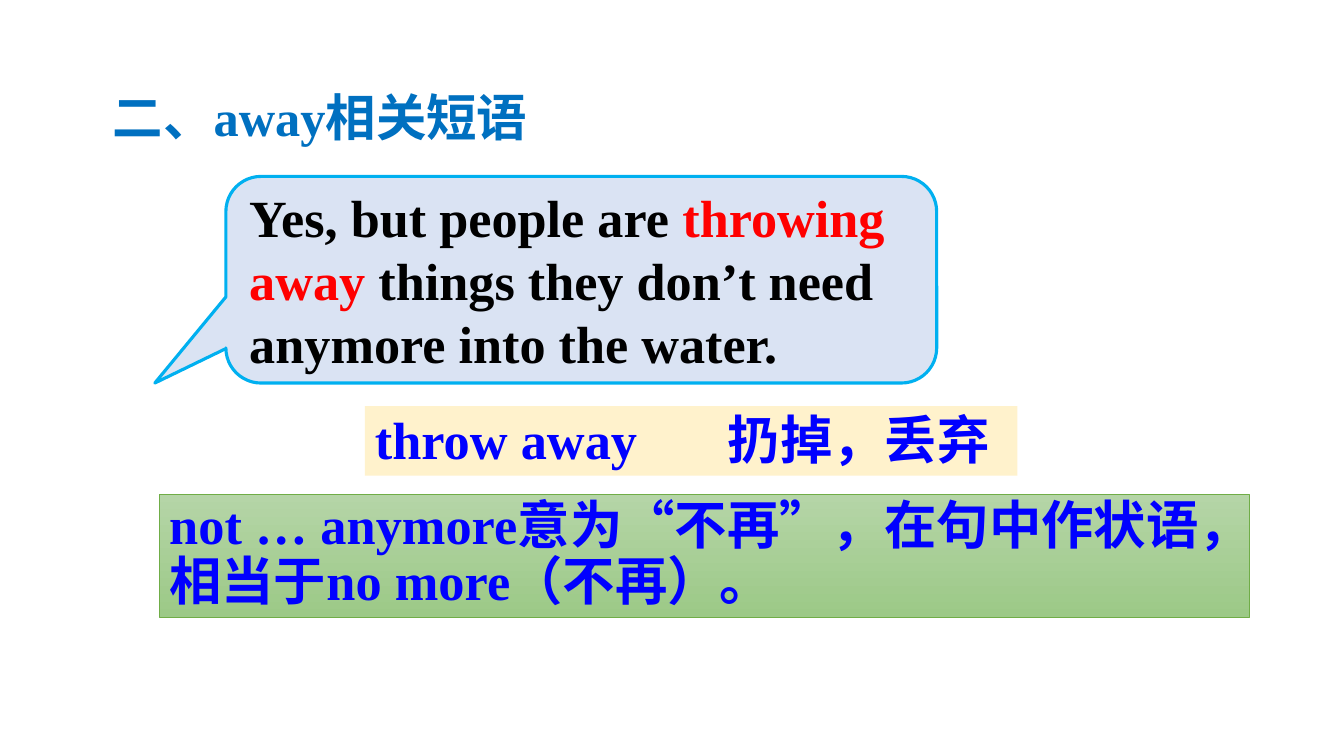
from pptx import Presentation
from pptx.dml.color import RGBColor
from pptx.enum.shapes import MSO_SHAPE
from pptx.enum.text import MSO_ANCHOR, MSO_AUTO_SIZE, PP_ALIGN
from pptx.oxml import parse_xml
from pptx.oxml.ns import nsdecls
from pptx.util import Inches, Pt

RECTANGLE = MSO_SHAPE.RECTANGLE
CALLOUT = MSO_SHAPE.ROUNDED_RECTANGULAR_CALLOUT
TOP, MIDDLE = MSO_ANCHOR.TOP, MSO_ANCHOR.MIDDLE
GROW = MSO_AUTO_SIZE.SHAPE_TO_FIT_TEXT
LEFT = PP_ALIGN.LEFT

CELL = 0.1  # inches per grid column and row
COLORS = {
    "title": "0070C0", "text": "000000", "accent": "FF0000", "phrase": "0000FF",
    "bubble": "DAE3F3", "bubble_edge": "00B0F0", "cream": "FFF2CC",
    "green_top": "B5D5A7", "green_bottom": "9CC987", "green_edge": "70AD47",
}


def color(name):
    return RGBColor.from_string(COLORS[name])


def grid(*cells):
    return [Inches(cell * CELL) for cell in cells]


class LessonPage:
    def __init__(self, deck, latin="Times New Roman", size=37.4):
        self.page = deck.slides.add_slide(deck.slide_layouts[6])
        self.latin, self.size = latin, size

    def style(self, font, ink, size=None, name=None):
        font.name, font.size = name or self.latin, Pt(size or self.size)
        font.bold, font.color.rgb = True, color(ink)

    def heading(self, area, number, words):
        box = self.page.shapes.add_textbox(*grid(*area))
        box.text_frame.word_wrap = True
        box.text_frame.auto_size = GROW
        para = box.text_frame.paragraphs[0]
        for words_part, name in ((number, "Arial"), (words, self.latin)):
            span = para.add_run()
            span.text = words_part
            self.style(span.font, "title", 36, name)

    def panel(self, kind, area, fills, edge=None, width=0, anchor=TOP):
        box = self.page.shapes.add_shape(kind, *grid(*area))
        box.shadow.inherit = False
        if len(fills) == 1:
            box.fill.solid()
            box.fill.fore_color.rgb = color(fills[0])
        else:
            box.fill.gradient()
            box.fill.gradient_angle = 270
            for stop, name in zip(box.fill.gradient_stops, fills):
                stop.color.rgb = color(name)
        if edge:
            box.line.color.rgb = color(edge)
            box.line.width = Pt(width)
        else:
            box.line.fill.background()
        box.text_frame.word_wrap = True
        box.text_frame.vertical_anchor = anchor
        return box

    def bubble(self, area, tail, lines):
        box = self.panel(CALLOUT, area, ["bubble"], "bubble_edge", 2.25, MIDDLE)
        for index, value in enumerate(tail):
            box.adjustments[index] = value
        frame = box.text_frame
        frame.margin_left = frame.margin_right = Inches(0.13)
        frame.margin_top = frame.margin_bottom = Inches(0.07)
        for index, spans in enumerate(lines):
            para = frame.add_paragraph() if index else frame.paragraphs[0]
            para.alignment = LEFT
            for words, ink in spans:
                span = para.add_run()
                span.text = words
                self.style(span.font, ink, 37.3)

    def note(self, area, words, spacing, fills, edge=None, tab=None):
        box = self.panel(RECTANGLE, area, fills, edge, 0.5)
        box.text_frame.auto_size = GROW
        para = box.text_frame.paragraphs[0]
        para.text = words
        para.alignment, para.line_spacing = LEFT, Pt(spacing)
        if tab:
            stop = f'<a:tabLst {nsdecls("a")}><a:tab pos="{Inches(tab)}" algn="l"/></a:tabLst>'
            para._p.get_or_add_pPr().append(parse_xml(stop))
        self.style(para.font, "phrase")


def main():
    deck = Presentation()
    deck.slide_width, deck.slide_height = Inches(13.33), Inches(7.5)
    lesson = LessonPage(deck)

    # Example sentence
    lesson.bubble((22.4, 17.5, 70.5, 20.5), (-0.6, 0.5, 0.17), [
        [("Yes, but people are ", "text"), ("throwing", "accent")],
        [("away", "accent"), (" things they don’t need", "text")],
        [("anymore into the water.", "text")],
    ])

    # Phrase and usage
    lesson.note((36.2, 40.3, 64.7, 6.9), "throw away\t扔掉，丢弃", 42,
                ["cream"], tab=3.5)
    lesson.note((15.8, 49, 108.1, 12.2),
                "not … anymore意为“不再”，在句中作状语，相当于no more（不再）。", 40,
                ["green_top", "green_bottom"], "green_edge")

    # Section heading
    lesson.heading((10.2, 8, 89.8, 7.1), "二、", "away相关短语")

    deck.save("out.pptx")


if __name__ == "__main__":
    main()
